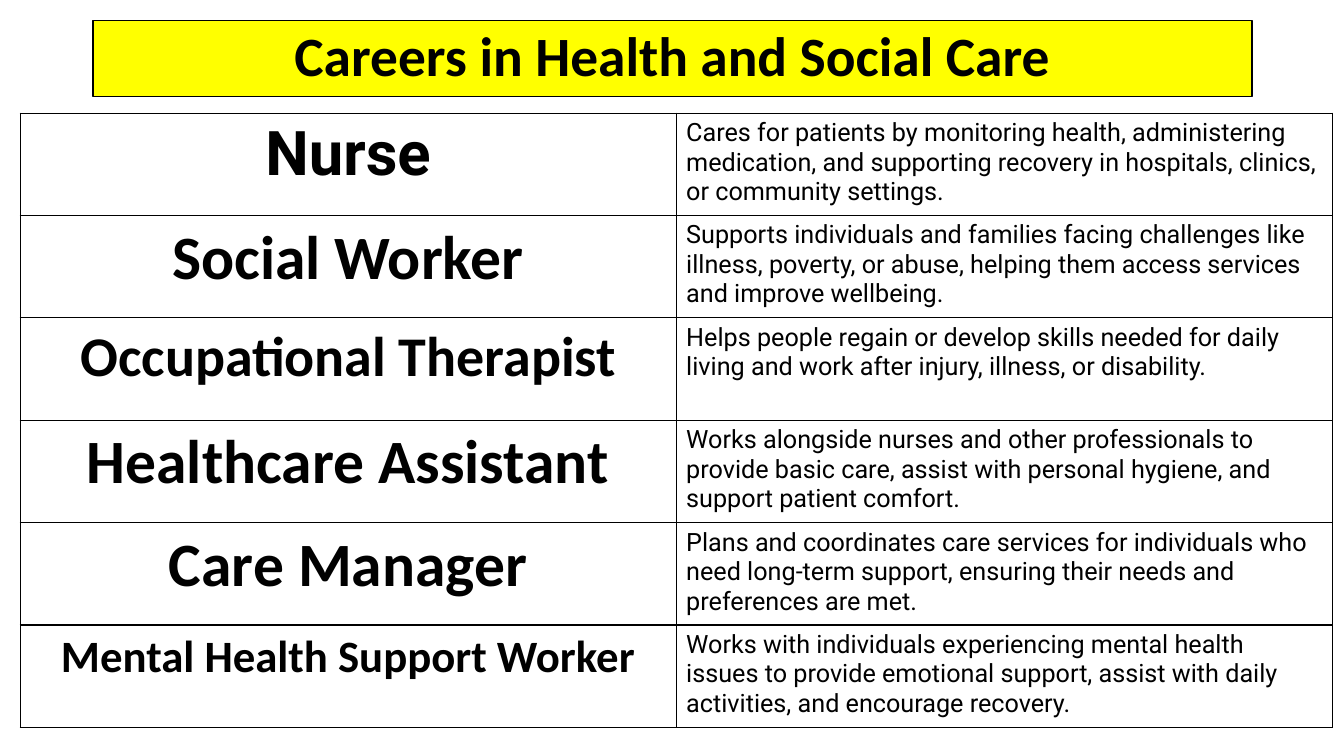
from dataclasses import dataclass

import pptx
import pptx.dml.color
import pptx.enum.shapes
import pptx.enum.text
import pptx.oxml
import pptx.oxml.ns
import pptx.util
from pptx.util import Cm

ALIGN = pptx.enum.text.PP_ALIGN


@dataclass(frozen=True)
class Theme:
    ink: str = "000000"
    paper: str = "FFFFFF"
    banner: str = "FFFF00"
    heading_font: str = "Calibri"
    body_font: str = "Roboto"
    title_size: float = 39.6
    career_size: int = 44
    long_career_size: int = 40
    longest_career_size: int = 32
    duty_size: int = 18
    line_width: int = 1


THEME = Theme()

# Career, its type size, its font, and what the job involves
CAREERS = [
    ("Nurse", THEME.career_size, THEME.body_font,
     "Cares for patients by monitoring health, administering medication, "
     "and supporting recovery in hospitals, clinics, or community settings."),
    ("Social Worker", THEME.career_size, THEME.heading_font,
     "Supports individuals and families facing challenges like illness, "
     "poverty, or abuse, helping them access services and improve wellbeing."),
    ("Occupational Therapist", THEME.long_career_size, THEME.heading_font,
     "Helps people regain or develop skills needed for daily living and work "
     "after injury, illness, or disability."),
    ("Healthcare Assistant", THEME.career_size, THEME.heading_font,
     "Works alongside nurses and other professionals to provide basic care, "
     "assist with personal hygiene, and support patient comfort."),
    ("Care Manager", THEME.career_size, THEME.heading_font,
     "Plans and coordinates care services for individuals who need long-term "
     "support, ensuring their needs and preferences are met."),
    ("Mental Health Support Worker", THEME.longest_career_size, THEME.heading_font,
     "Works with individuals experiencing mental health issues to provide "
     "emotional support, assist with daily activities, and encourage recovery."),
]


def rgb(color):
    return pptx.dml.color.RGBColor.from_string(color)


def write(frame, text, *, size, font, bold=False, align=ALIGN.LEFT, spacing=None):
    paragraph = frame.paragraphs[0]
    paragraph.alignment = align
    if spacing:
        paragraph.line_spacing = spacing
    run = paragraph.add_run()
    run.text = text
    run.font.size = pptx.util.Pt(size)
    run.font.name = font
    run.font.bold = bold
    run.font.color.rgb = rgb(THEME.ink)


def add_banner(slide, text):
    banner = slide.shapes.add_shape(
        pptx.enum.shapes.MSO_SHAPE.RECTANGLE, Cm(2.34), Cm(0.52), Cm(29.21), Cm(1.91))
    banner.shadow.inherit = False
    banner.fill.solid()
    banner.fill.fore_color.rgb = rgb(THEME.banner)
    banner.line.color.rgb = rgb(THEME.ink)
    banner.line.width = pptx.util.Pt(THEME.line_width)
    banner.text_frame.word_wrap = True
    banner.text_frame.vertical_anchor = pptx.enum.text.MSO_ANCHOR.MIDDLE
    write(banner.text_frame, text, size=THEME.title_size, font=THEME.heading_font,
          bold=True, align=ALIGN.CENTER, spacing=0.9)


def style_cell(cell):
    # Borders come before the fill in the cell properties
    properties = cell._tc.get_or_add_tcPr()
    for side in ("lnL", "lnR", "lnT", "lnB"):
        properties.append(pptx.oxml.parse_xml(
            f'<a:{side} {pptx.oxml.ns.nsdecls("a")} w="{pptx.util.Pt(THEME.line_width)}">'
            f'<a:solidFill><a:srgbClr val="{THEME.ink}"/></a:solidFill></a:{side}>'))
    cell.fill.solid()
    cell.fill.fore_color.rgb = rgb(THEME.paper)


def add_careers_table(slide, careers):
    row_height, column_width = Cm(2.58), Cm(16.53)
    table = slide.shapes.add_table(
        len(careers), 2, Cm(0.51), Cm(2.85),
        column_width * 2, row_height * len(careers)).table
    table.first_row = table.horz_banding = False
    for column in table.columns:
        column.width = column_width
    for row, (career, size, font, duties) in zip(table.rows, careers):
        row.height = row_height
        career_cell, duties_cell = row.cells
        style_cell(career_cell)
        style_cell(duties_cell)
        write(career_cell.text_frame, career, size=size, font=font,
              bold=True, align=ALIGN.CENTER)
        write(duties_cell.text_frame, duties, size=THEME.duty_size, font=THEME.body_font)


def main():
    deck = pptx.Presentation()
    deck.slide_width, deck.slide_height = Cm(33.87), Cm(19.05)
    slide = deck.slides.add_slide(deck.slide_layouts[6])

    # Title banner
    add_banner(slide, "Careers in Health and Social Care")

    # Careers and their duties
    add_careers_table(slide, CAREERS)

    deck.save("out.pptx")


if __name__ == "__main__":
    main()
